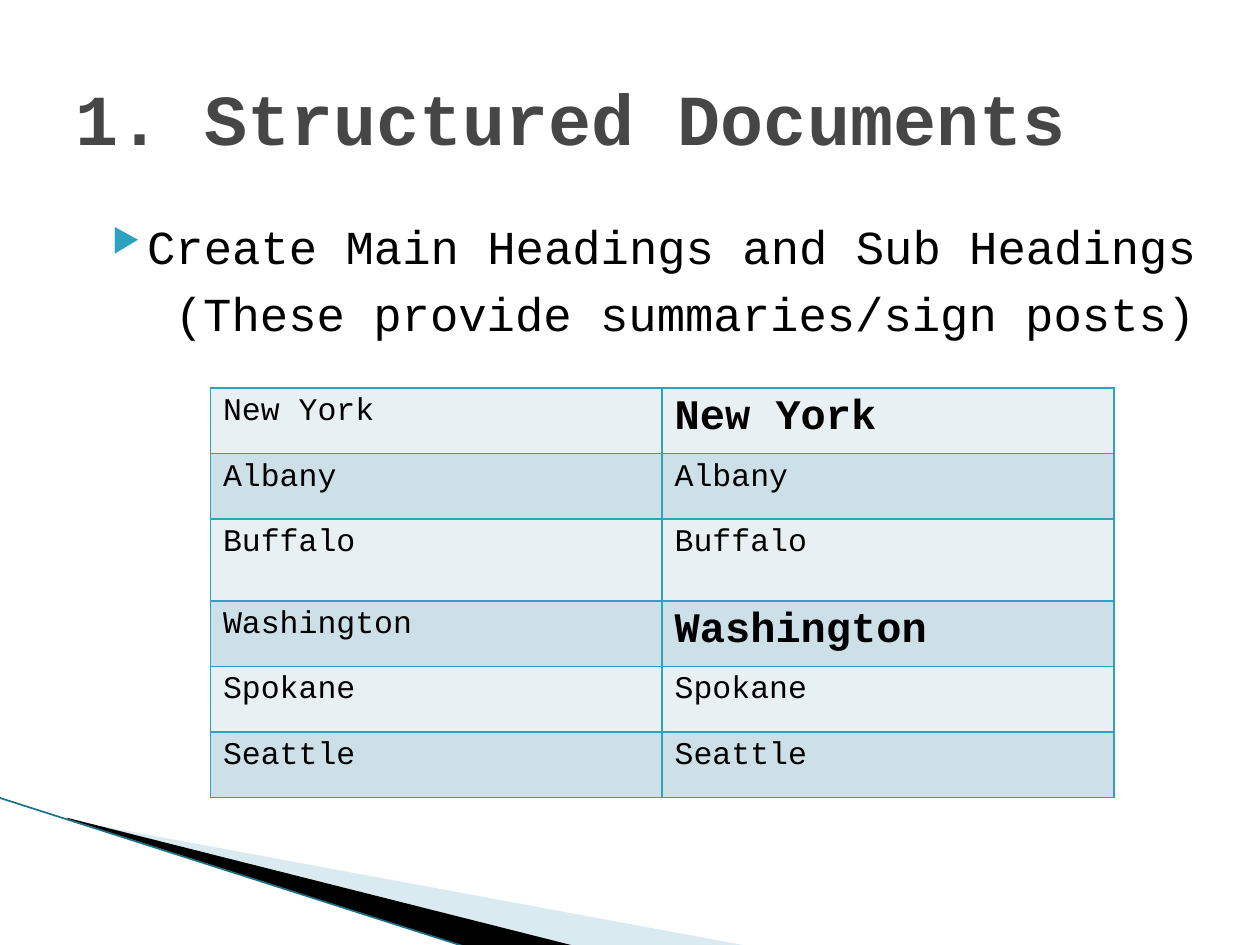
from lxml import etree
from pptx import Presentation
from pptx.dml.color import RGBColor
from pptx.enum.shapes import MSO_CONNECTOR
from pptx.enum.text import MSO_ANCHOR
from pptx.oxml.ns import qn
from pptx.util import Inches, Pt

STRAIGHT = MSO_CONNECTOR.STRAIGHT
MIDDLE, TOP = MSO_ANCHOR.MIDDLE, MSO_ANCHOR.TOP
FONT = "Courier New"
COLORS = {
    "title": "464646",
    "text": "000000",
    "accent": "2DA2BF",
    "light_row": "E8F0F4",
    "dark_row": "CDE0E8",
    "pale_wedge": "A0CBDC",
    "black_wedge": "000000",
    "edge": "1C7084",
}


def color(name):
    return RGBColor.from_string(COLORS[name])


def add_child(parent, tag, **attributes):
    child = etree.SubElement(parent, qn(tag))
    for key, value in attributes.items():
        child.set(key, str(value))
    return child


def write(paragraph, text, size=18, bold=False, tint="text"):
    run = paragraph.add_run()
    run.text = text
    run.font.name = FONT
    run.font.size = Pt(size)
    run.font.bold = bold
    run.font.color.rgb = color(tint)


class SlideWriter:
    def __init__(self, slide):
        self.slide = slide

    def wedge(self, points, tint, opacity=None):
        corners = [(Inches(x), Inches(y)) for x, y in points]
        builder = self.slide.shapes.build_freeform(*corners[0], scale=1.0)
        builder.add_line_segments(corners[1:], close=True)
        shape = builder.convert_to_shape()
        shape.shadow.inherit = False
        shape.fill.solid()
        shape.fill.fore_color.rgb = color(tint)
        shape.line.fill.background()
        if opacity is not None:
            fill = shape.fill._xPr.find(qn("a:solidFill"))
            add_child(fill[0], "a:alpha", val=opacity * 1000)

    def line(self, start, end, tint, width):
        ends = [Inches(value) for value in (*start, *end)]
        connector = self.slide.shapes.add_connector(STRAIGHT, *ends)
        connector.line.color.rgb = color(tint)
        connector.line.width = Pt(width)
        add_child(connector._element.spPr, "a:effectLst")

    def text_box(self, left, top, width, height, anchor=TOP):
        box = self.slide.shapes.add_textbox(
            Inches(left), Inches(top), Inches(width), Inches(height))
        frame = box.text_frame
        frame.word_wrap = True
        frame.vertical_anchor = anchor
        return frame

    def indent(self, paragraph, left, first, bullet=None):
        properties = paragraph._p.get_or_add_pPr()
        properties.set("marL", str(Inches(left)))
        properties.set("indent", str(Inches(first)))
        if bullet:
            tint = add_child(properties, "a:buClr")
            add_child(tint, "a:srgbClr", val=COLORS["accent"])
            add_child(properties, "a:buSzPct", val=68000)
            add_child(properties, "a:buChar", char=bullet)
        paragraph.line_spacing = 1.07

    def border(self, cell, tint, width):
        properties = cell._tc.get_or_add_tcPr()
        for position, side in enumerate(("a:lnL", "a:lnR", "a:lnT", "a:lnB")):
            edge = etree.Element(qn(side), w=str(Pt(width)))
            fill = add_child(edge, "a:solidFill")
            add_child(fill, "a:srgbClr", val=COLORS[tint])
            properties.insert(position, edge)

    def table(self, left, top, width, row_heights, rows, headings):
        grid = self.slide.shapes.add_table(
            len(rows), len(rows[0]), Inches(left), Inches(top),
            Inches(width), Inches(sum(row_heights))).table
        for r, (height, row) in enumerate(zip(row_heights, rows)):
            grid.rows[r].height = Inches(height)
            for c, text in enumerate(row):
                cell = grid.cell(r, c)
                cell.fill.solid()
                cell.fill.fore_color.rgb = color(
                    "dark_row" if r % 2 else "light_row")
                self.border(cell, "accent", 1)
                heading = c == 1 and text in headings
                write(cell.text_frame.paragraphs[0], text,
                      size=24 if heading else 18, bold=heading)


def main():
    deck = Presentation()
    deck.slide_width, deck.slide_height = Inches(10), Inches(7.5)
    writer = SlideWriter(deck.slides.add_slide(deck.slide_layouts[6]))

    # Corner decoration
    writer.wedge([(0.55, 6.51), (5.95, 7.51), (4.56, 7.51), (0.55, 6.5)],
                 "pale_wedge", opacity=40)
    writer.wedge([(0.53, 6.49), (4.57, 7.51), (3.72, 7.52), (0.54, 6.5)],
                 "black_wedge")
    writer.line((-0.01, 6.33), (3.71, 7.52), "edge", 0.95)

    # Advice and its explanation
    body = writer.text_box(0.67, 1.64, 9, 4.89)
    advice = body.paragraphs[0]
    writer.indent(advice, 0.4, -0.28, bullet="▶")
    write(advice, "Create Main Headings and Sub Headings", size=27)
    reason = body.add_paragraph()
    writer.indent(reason, 0.12, 0)
    reason.space_before = Pt(4)
    write(reason, "\t(These provide summaries/sign posts)", size=27)

    # Title
    title = writer.text_box(0.5, 0.3, 9, 1.25, anchor=MIDDLE)
    write(title.paragraphs[0], "1. Structured Documents",
          size=41, bold=True, tint="title")

    # Plain list beside the same list with headings
    states = {"New York": ["Albany", "Buffalo"],
              "Washington": ["Spokane", "Seattle"]}
    places = [place for state, cities in states.items()
              for place in (state, *cities)]
    writer.table(1.67, 3.08, 7.17, [0.52, 0.52, 0.65, 0.52, 0.52, 0.52],
                 [(place, place) for place in places], headings=states)

    deck.save("out.pptx")


if __name__ == "__main__":
    main()
